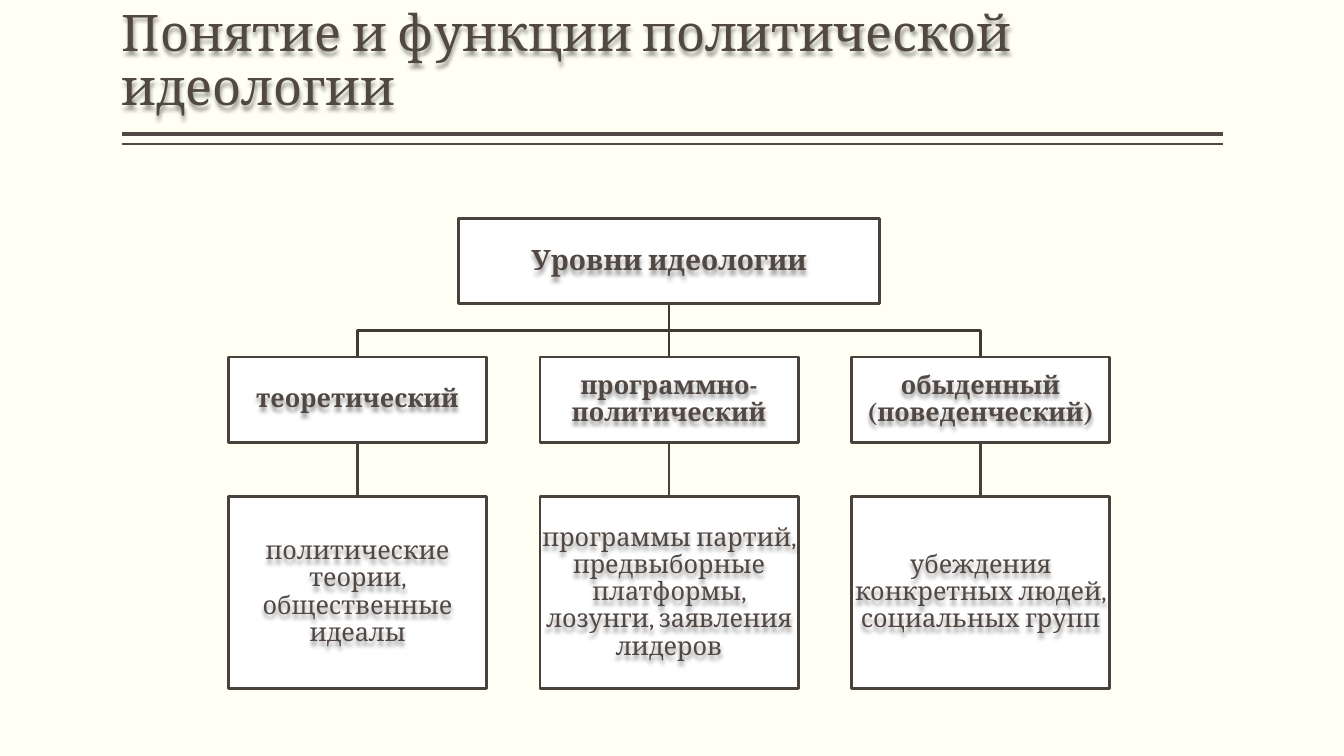
from lxml import etree
from pptx import Presentation
from pptx.dml.color import RGBColor
from pptx.enum import shapes, text
from pptx.oxml import parse_xml
from pptx.oxml.ns import nsdecls, qn
from pptx.util import Pt

FONT = "Cambria"
TEXT_COLOR = "514843"
BORDER_COLOR = "49413C"
BRANCH_COLOR = "403934"

TITLE = "Понятие и функции политической идеологии"
ROOT = "Уровни идеологии"
LEVELS = [
    ("теоретический", "политические теории, общественные идеалы"),
    ("программно- политический",
     "программы партий, предвыборные платформы, лозунги, заявления лидеров"),
    ("обыденный (поведенческий)", "убеждения конкретных людей, социальных групп"),
]


def color(hex_string):
    return RGBColor.from_string(hex_string)


def style_line(line, hex_string, width):
    line.color.rgb = color(hex_string)
    line.width = Pt(width)


def add_text_shadow(shape):
    """Give an unfilled shape a soft shadow, which falls on its text."""
    shape.fill.background()
    shape._element.spPr.append(parse_xml(
        f'<a:effectLst {nsdecls("a")}>'
        '<a:outerShdw blurRad="38100" dist="38100" dir="5400000" algn="t" rotWithShape="0">'
        '<a:srgbClr val="000000"><a:alpha val="40000"/></a:srgbClr>'
        '</a:outerShdw></a:effectLst>'))


def write_text(shape, words, size, anchor, alignment, insets, bold=False):
    frame = shape.text_frame
    frame.word_wrap = True
    frame.auto_size = text.MSO_AUTO_SIZE.NONE
    frame.vertical_anchor = anchor
    side, end = insets
    frame.margin_left = frame.margin_right = Pt(side)
    frame.margin_top = frame.margin_bottom = Pt(end)
    paragraph = frame.paragraphs[0]
    paragraph.alignment = alignment
    paragraph.line_spacing = 0.9
    run = paragraph.add_run()
    run.text = words
    run.font.name = FONT
    run.font.size = Pt(size)
    run.font.bold = bold
    run.font.color.rgb = color(TEXT_COLOR)
    add_text_shadow(shape)


def add_line(slide, start, end, hex_string, width):
    line = slide.shapes.add_connector(
        shapes.MSO_CONNECTOR.STRAIGHT, *(Pt(value) for value in start + end))
    style_line(line.line, hex_string, width)
    etree.SubElement(line._element.spPr, qn("a:effectLst"))


def add_branch(slide, start, end):
    """Join two points, turning halfway down where they are not in line."""
    if start[0] == end[0]:
        add_line(slide, start, end, BRANCH_COLOR, 2)
        return
    middle = (start[1] + end[1]) / 2
    points = [start, (start[0], middle), (end[0], middle), end]
    points = [(Pt(x), Pt(y)) for x, y in points]
    builder = slide.shapes.build_freeform(*points[0])
    builder.add_line_segments(points[1:], close=False)
    branch = builder.convert_to_shape()
    branch.shadow.inherit = False
    branch.fill.background()
    style_line(branch.line, BRANCH_COLOR, 2)


def add_box(slide, left, top, width, height, words, size, bold):
    bounds = [Pt(value) for value in (left, top, width, height)]
    box = slide.shapes.add_shape(shapes.MSO_SHAPE.RECTANGLE, *bounds)
    box.shadow.inherit = False
    box.fill.solid()
    box.fill.fore_color.rgb = color("FFFFFF")
    style_line(box.line, BORDER_COLOR, 2)
    label = slide.shapes.add_textbox(*bounds)
    write_text(label, words, size, text.MSO_ANCHOR.MIDDLE,
               text.PP_ALIGN.CENTER, (0.9, 0.9), bold)


def add_title(slide, left, top, width, height):
    title = slide.shapes.title
    title.left, title.top, title.width, title.height = (
        Pt(value) for value in (left, top, width, height))
    write_text(title, TITLE, 36, text.MSO_ANCHOR.BOTTOM, text.PP_ALIGN.LEFT, (0, 3.6))
    for gap, weight in ((9, 3), (16.2, 1)):
        y = top + height + gap
        add_line(slide, (left, y), (left + width, y), TEXT_COLOR, weight)


def add_hierarchy(slide, left, top, width, height):
    column_width, root_width, head_height = 184.4, 300.4, 61
    gap = (width - len(LEVELS) * column_width) / (len(LEVELS) - 1)
    center = left + width / 2
    level_top = top + head_height + 38
    detail_top = level_top + head_height + 38.6
    detail_height = top + height - detail_top
    columns = [left + index * (column_width + gap) for index in range(len(LEVELS))]

    for column in columns:
        x = round(column + column_width / 2, 2)
        add_branch(slide, (round(center, 2), top + head_height), (x, level_top))
        add_line(slide, (x, level_top + head_height), (x, detail_top), BORDER_COLOR, 2)

    add_box(slide, center - root_width / 2, top, root_width, head_height, ROOT, 20, True)
    for column, (level, detail) in zip(columns, LEVELS):
        add_box(slide, column, level_top, column_width, head_height, level, 18, True)
        add_box(slide, column, detail_top, column_width, detail_height, detail, 18, False)


def main():
    presentation = Presentation()
    presentation.slide_width = Pt(960)
    presentation.slide_height = Pt(540)
    slide = presentation.slides.add_slide(presentation.slide_layouts[5])
    slide.background.fill.solid()
    slide.background.fill.fore_color.rgb = color("FFFFF3")
    add_title(slide, 87.1, 5.8, 786.2, 81)
    add_hierarchy(slide, 163.2, 156, 629.4, 335.6)
    presentation.save("out.pptx")


if __name__ == "__main__":
    main()
